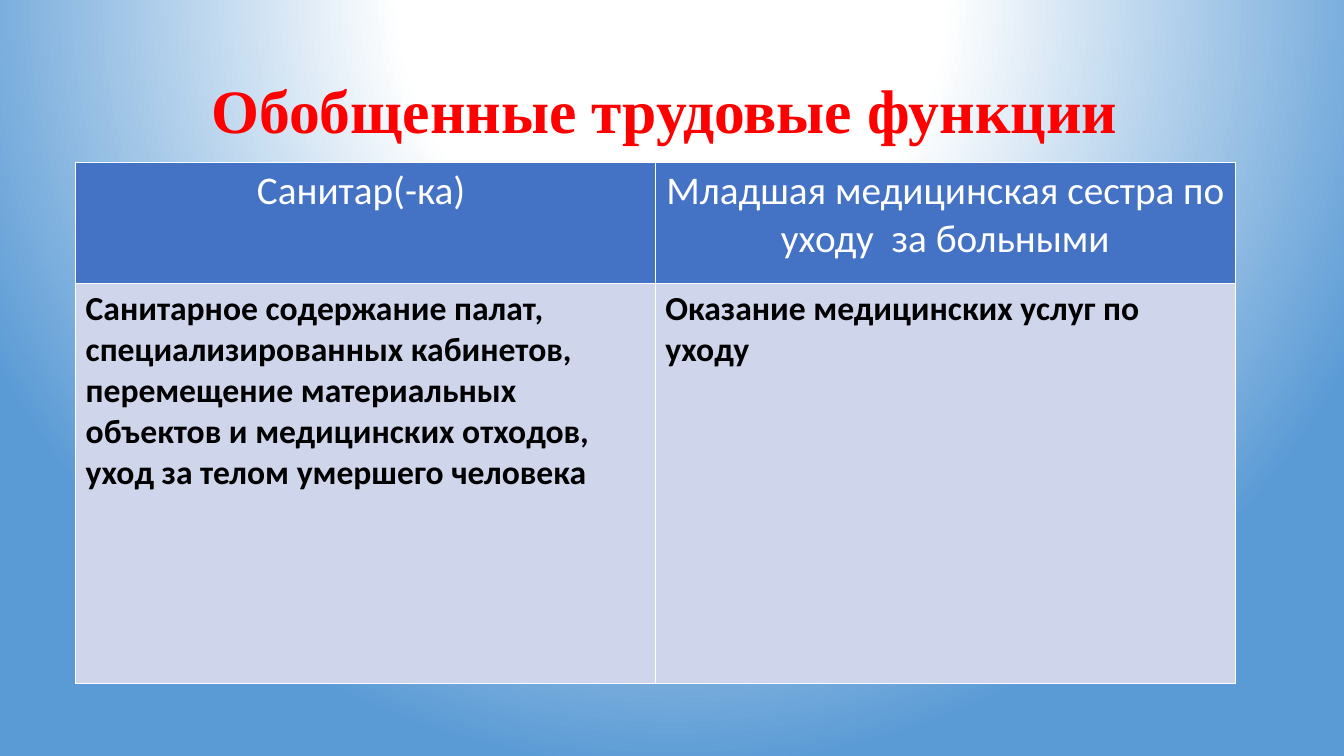
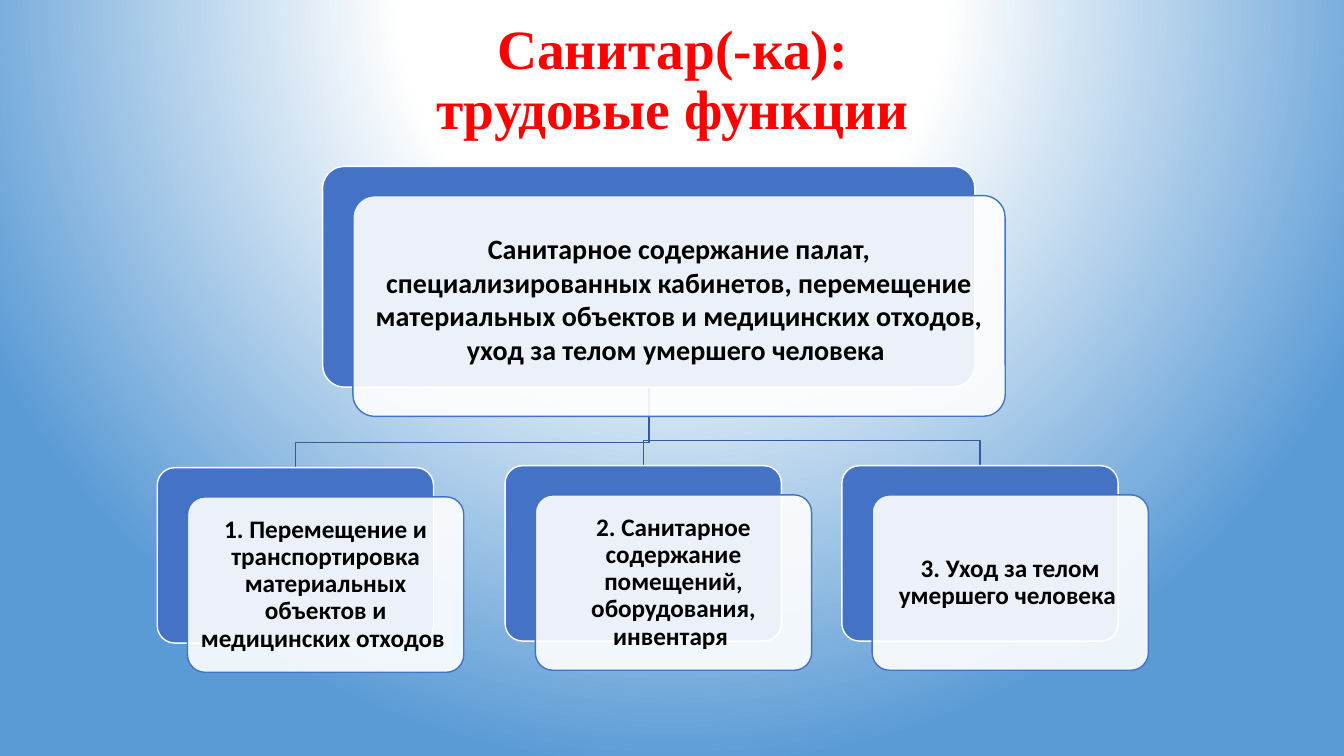
import copy

import lxml.etree
import pptx
import pptx.dml.color
import pptx.enum.shapes
import pptx.enum.text
import pptx.oxml
import pptx.oxml.ns
import pptx.util

Inches = pptx.util.Inches
Pt = pptx.util.Pt
qn = pptx.oxml.ns.qn
PP_ALIGN = pptx.enum.text.PP_ALIGN
MSO_ANCHOR = pptx.enum.text.MSO_ANCHOR

COLORS = {
    "white": "FFFFFF",
    "black": "000000",
    "title": "FF0000",
    "blue": "4472C4",
    "link": "365B9D",
    "cell": "CFD5EA",
    "sky": "5B9BD5",
}
BODY_FONT = "Calibri"
TITLE_FONT = "Times New Roman"
TITLE_ONLY = 5


def rgb(name):
    return pptx.dml.color.RGBColor.from_string(COLORS[name])


def write(tf, text, size, color="black", font=BODY_FONT, bold=True,
          align=PP_ALIGN.CENTER, spacing=None):
    """Fill a text frame with one paragraph; a vertical tab breaks the line."""
    tf.word_wrap = True
    p = tf.paragraphs[0]
    p.text = text
    p.alignment = align
    p.line_spacing = spacing
    for r in p.runs:
        r.font.size = Pt(size)
        r.font.name = font
        r.font.bold = bold
        r.font.color.rgb = rgb(color)
    for br in p._p.findall(qn("a:br")):
        br.insert(0, copy.deepcopy(p.runs[0]._r.find(qn("a:rPr"))))


def set_borders(cell, color="white", width=1):
    tc_pr = cell._tc.get_or_add_tcPr()
    for i, side in enumerate(("lnL", "lnR", "lnT", "lnB")):
        ln = lxml.etree.Element(qn(f"a:{side}"), w=str(Pt(width)))
        fill = lxml.etree.SubElement(ln, qn("a:solidFill"))
        lxml.etree.SubElement(fill, qn("a:srgbClr"), val=COLORS[color])
        tc_pr.insert(i, ln)


class Deck:
    def __init__(self):
        self.prs = pptx.Presentation()
        self.prs.slide_width = Inches(13.33)
        self.prs.slide_height = Inches(7.5)
        self.slide = None
        self.set_background()

    def set_background(self):
        """Give the master a round glow that starts above the slide."""
        master = self.prs.slide_master
        master.background.fill.solid()
        solid = master.element.find(".//" + qn("p:bgPr")).find(qn("a:solidFill"))
        stops = "".join(
            f'<a:gs pos="{pos}000"><a:srgbClr val="{COLORS[name]}"/></a:gs>'
            for pos, name in ((0, "white"), (35, "white"), (100, "sky")))
        grad = pptx.oxml.parse_xml(
            f'<a:gradFill {pptx.oxml.ns.nsdecls("a")} rotWithShape="1">'
            f'<a:gsLst>{stops}</a:gsLst><a:path path="circle">'
            '<a:fillToRect l="50000" t="-80000" r="50000" b="180000"/>'
            '</a:path></a:gradFill>')
        solid.getparent().replace(solid, grad)

    def add_slide(self, title, x, y, w, h, size):
        self.slide = self.prs.slides.add_slide(self.prs.slide_layouts[TITLE_ONLY])
        sp = self.slide.shapes.title
        sp.left, sp.top, sp.width, sp.height = map(Inches, (x, y, w, h))
        tf = sp.text_frame
        tf.auto_size = pptx.enum.text.MSO_AUTO_SIZE.NONE
        tf.vertical_anchor = MSO_ANCHOR.MIDDLE
        write(tf, title, size, "title", TITLE_FONT, spacing=0.9)

    def table(self, rows, x, y, col_width, row_heights):
        cols = len(rows[0])
        table = self.slide.shapes.add_table(
            len(rows), cols, Inches(x), Inches(y),
            Inches(col_width * cols), Inches(sum(row_heights))).table
        for col in table.columns:
            col.width = Inches(col_width)
        for i, (texts, height) in enumerate(zip(rows, row_heights)):
            table.rows[i].height = Inches(height)
            for j, text in enumerate(texts):
                cell = table.cell(i, j)
                cell.fill.solid()
                cell.fill.fore_color.rgb = rgb("cell" if i else "blue")
                set_borders(cell)
                if i:
                    write(cell.text_frame, text, 24, align=PP_ALIGN.LEFT)
                else:
                    write(cell.text_frame, text, 28, "white", bold=False)

    def link(self, x1, y1, x2, y2):
        """Draw an elbow line down from a parent to the top of a child."""
        bend = y2 - 0.25
        builder = self.slide.shapes.build_freeform(Inches(x1), Inches(y1))
        builder.add_line_segments(
            [(Inches(x), Inches(y)) for x, y in ((x1, bend), (x2, bend), (x2, y2))],
            close=False)
        sp = builder.convert_to_shape()
        sp.shadow.inherit = False
        sp.fill.background()
        sp.line.color.rgb = rgb("link")
        sp.line.width = Pt(1)

    def panel(self, x, y, w, h, fill, line, opacity=100):
        sp = self.slide.shapes.add_shape(
            pptx.enum.shapes.MSO_SHAPE.ROUNDED_RECTANGLE,
            Inches(x), Inches(y), Inches(w), Inches(h))
        sp.adjustments[0] = 0.1
        sp.shadow.inherit = False
        sp.fill.solid()
        sp.fill.fore_color.rgb = rgb(fill)
        if opacity < 100:
            color = sp._element.spPr.find(qn("a:solidFill")).find(qn("a:srgbClr"))
            lxml.etree.SubElement(color, qn("a:alpha"), val=f"{opacity}000")
        sp.line.color.rgb = rgb(line)
        sp.line.width = Pt(1)
        return sp

    def card(self, text, x, y, w, h, size, inset=0.07, lift=0, spacing=None):
        """Draw a blue panel with a translucent text panel shifted over it."""
        self.panel(x, y, w, h, "blue", "white")
        tf = self.panel(x + 0.3, y + 0.29, w, h, "white", "blue", 90).text_frame
        tf.margin_left = tf.margin_right = tf.margin_top = Inches(inset)
        tf.margin_bottom = Inches(inset + lift)
        tf.vertical_anchor = MSO_ANCHOR.MIDDLE
        write(tf, text, size, spacing=spacing)


def build_general_functions(deck):
    deck.add_slide("Обобщенные трудовые функции ", 0.92, 0.4, 11.5, 1.45, 44)
    deck.table(
        [("Санитар(-ка) ", "Младшая медицинская сестра по уходу  за больными"),
         ("Санитарное содержание палат, специализированных кабинетов, "
          "перемещение материальных объектов и медицинских отходов, "
          "уход за телом умершего человека",
          "Оказание медицинских услуг по уходу")],
        0.75, 1.61, 5.75, (1.2, 3.97))


def build_orderly_functions(deck):
    deck.add_slide("Санитар(-ка):\vтрудовые функции", 2.17, 0.3, 9, 1.01, 39.6)
    x, y, w, h = 3.2, 1.65, 6.47, 2.19
    child_w, child_h = 2.74, 1.74
    children = [
        (1.56, 4.64, "1. Перемещение и транспортировка материальных "
                     "объектов и медицинских отходов "),
        (5.01, 4.62, "2. Санитарное содержание помещений, "
                     "оборудования, инвентаря "),
        (8.35, 4.62, "3. Уход за телом умершего человека "),
    ]
    for child_x, child_y, _ in children:
        deck.link(x + w / 2, y + h, child_x + child_w / 2, child_y)
    deck.card("Санитарное содержание палат, специализированных кабинетов, "
              "перемещение материальных объектов и медицинских отходов, "
              "уход за телом умершего человека ",
              x, y, w, h, 20, inset=0.08, lift=0.14)
    for child_x, child_y, text in children:
        deck.card(text, child_x, child_y, child_w, child_h, 18, spacing=0.9)


def main():
    deck = Deck()
    build_general_functions(deck)
    build_orderly_functions(deck)
    deck.prs.save("out.pptx")


if __name__ == "__main__":
    main()
